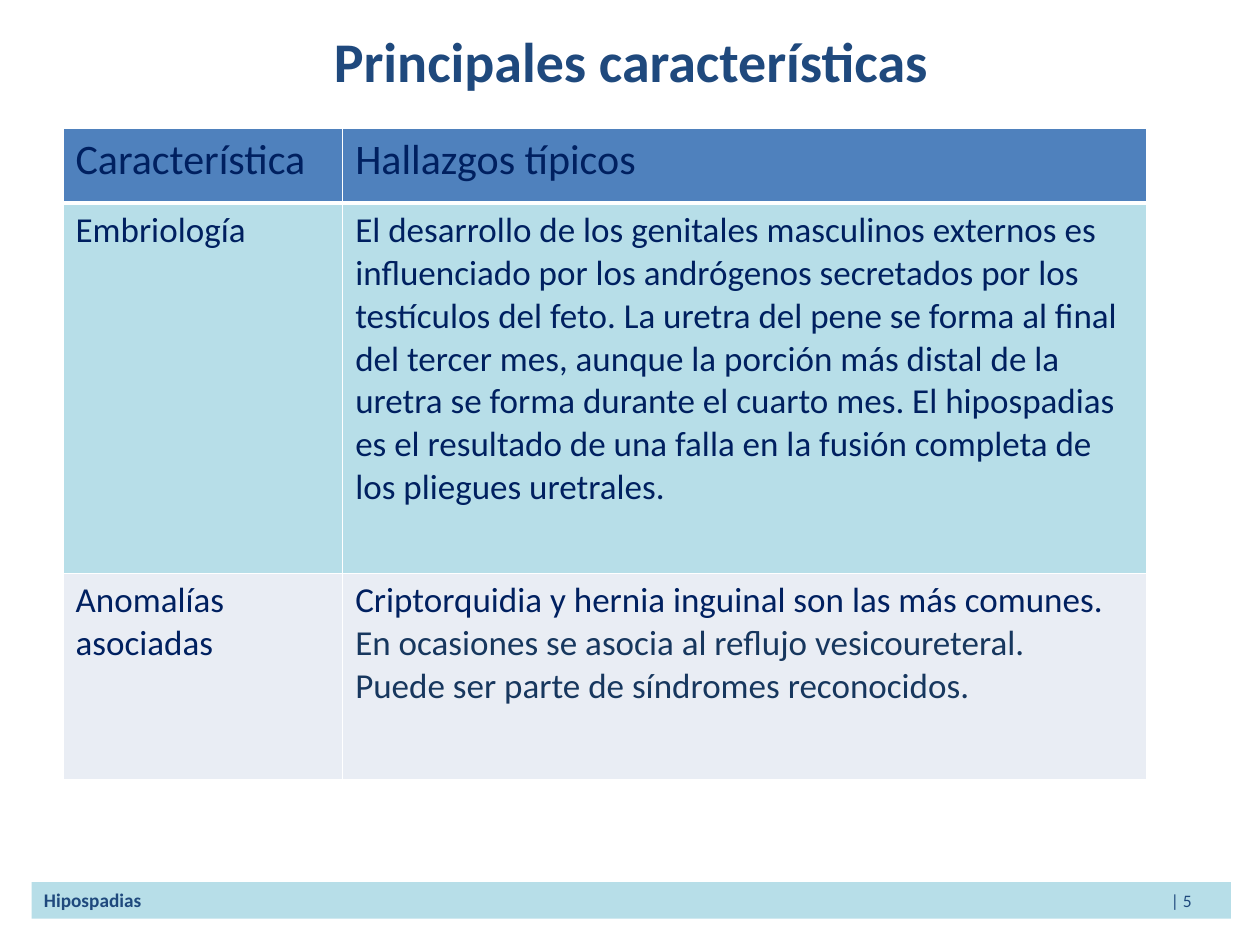
from lxml.etree import SubElement
from pptx import Presentation
from pptx.dml.color import RGBColor
from pptx.enum.shapes import MSO_SHAPE
from pptx.enum.text import MSO_ANCHOR, PP_ALIGN
from pptx.oxml.ns import qn
from pptx.util import Inches, Pt

# Content
TITLE = "Principales características"
FOOTER, PAGE_MARK = "Hipospadias", "| 5"
ROWS = [
    (["Característica"], ["Hallazgos típicos"]),
    (["Embriología"], [
        "El desarrollo de los genitales masculinos externos es influenciado "
        "por los andrógenos secretados por los testículos del feto. La uretra "
        "del pene se forma al final del tercer mes, aunque la porción más "
        "distal de la uretra se forma durante el cuarto mes. El hipospadias es "
        "el resultado de una falla en la fusión completa de los pliegues "
        "uretrales."]),
    (["Anomalías asociadas"], [
        "Criptorquidia y hernia inguinal son las más comunes.",
        "En ocasiones se asocia al reflujo vesicoureteral.",
        "Puede ser parte de síndromes reconocidos."]),
]
COLUMN_WIDTHS = (2.22, 6.38)
ROW_HEIGHTS = (0.59, 2.94, 1.64)

# Theme
THEME = {
    "font": "Calibri",
    "border": "FFFFFF",
    "bar": "B7DEE8",
    "row_fills": ("4F81BD", "B7DEE8", "E9EDF4"),
    "title": {"size": 32, "bold": True, "color": "1F497D"},
    "footer": {"size": 11, "bold": True, "color": "1F497D"},
    "page": {"size": 10, "bold": False, "color": "1F497D"},
    "header": {"size": 24, "bold": False, "color": "002060"},
    "body": {"size": 20, "bold": False, "color": "002060"},
    "detail": {"size": 20, "bold": False, "color": "17375E"},
}


def add_span(para, text, style):
    span = para.add_run()
    span.text = text
    look = THEME[style]
    values = {"name": THEME["font"], "size": Pt(look["size"]), "bold": look["bold"]}
    for name, value in values.items():
        setattr(span.font, name, value)
    span.font.color.rgb = RGBColor.from_string(look["color"])


def paint(fill, color):
    fill.solid()
    fill.fore_color.rgb = RGBColor.from_string(color)


def add_borders(cell, bottom):
    properties = cell._tc.get_or_add_tcPr()
    for side, width in {"L": 1, "R": 1, "T": 1, "B": bottom}.items():
        line = SubElement(properties, qn(f"a:ln{side}"), w=str(Pt(width)))
        solid = SubElement(line, qn("a:solidFill"))
        SubElement(solid, qn("a:srgbClr"), val=THEME["border"])


def add_footer(page):
    bar = page.shapes.add_shape(
        MSO_SHAPE.RECTANGLE, Inches(0.25), Inches(7), Inches(9.52), Inches(0.29))
    bar.shadow.inherit = False
    paint(bar.fill, THEME["bar"])
    bar.line.fill.background()
    bar.text_frame.word_wrap = True
    para = bar.text_frame.paragraphs[0]
    para.alignment = PP_ALIGN.LEFT
    # A right tab stop holds the page number
    tabs = SubElement(para._p.get_or_add_pPr(), qn("a:tabLst"))
    SubElement(tabs, qn("a:tab"), pos=str(Inches(9.11)), algn="r")
    add_span(para, FOOTER, "footer")
    add_span(para, "\t" + PAGE_MARK, "page")


def add_title(page):
    box = page.shapes.add_textbox(Inches(0.51), Inches(0.21), Inches(9), Inches(0.54))
    frame = box.text_frame
    frame.word_wrap = True
    frame.vertical_anchor = MSO_ANCHOR.MIDDLE
    para = frame.paragraphs[0]
    para.alignment = PP_ALIGN.CENTER
    add_span(para, TITLE, "title")


def add_findings(page):
    table = page.shapes.add_table(
        len(ROWS), len(COLUMN_WIDTHS), Inches(0.5), Inches(1.02),
        Inches(sum(COLUMN_WIDTHS)), Inches(sum(ROW_HEIGHTS))).table
    for column, width in zip(table.columns, COLUMN_WIDTHS):
        column.width = Inches(width)
    for row, height in zip(table.rows, ROW_HEIGHTS):
        row.height = Inches(height)
    for r, row in enumerate(ROWS):
        for c, lines in enumerate(row):
            cell = table.cell(r, c)
            add_borders(cell, bottom=3 if r == 0 else 1)
            paint(cell.fill, THEME["row_fills"][r])
            for i, text in enumerate(lines):
                frame = cell.text_frame
                para = frame.add_paragraph() if i else frame.paragraphs[0]
                style = "header" if r == 0 else "detail" if i else "body"
                add_span(para, text, style)


def main():
    deck = Presentation()
    deck.slide_width, deck.slide_height = Inches(10), Inches(7.5)
    page = deck.slides.add_slide(deck.slide_layouts[6])
    add_footer(page)
    add_title(page)
    add_findings(page)
    deck.save("out.pptx")


if __name__ == "__main__":
    main()
